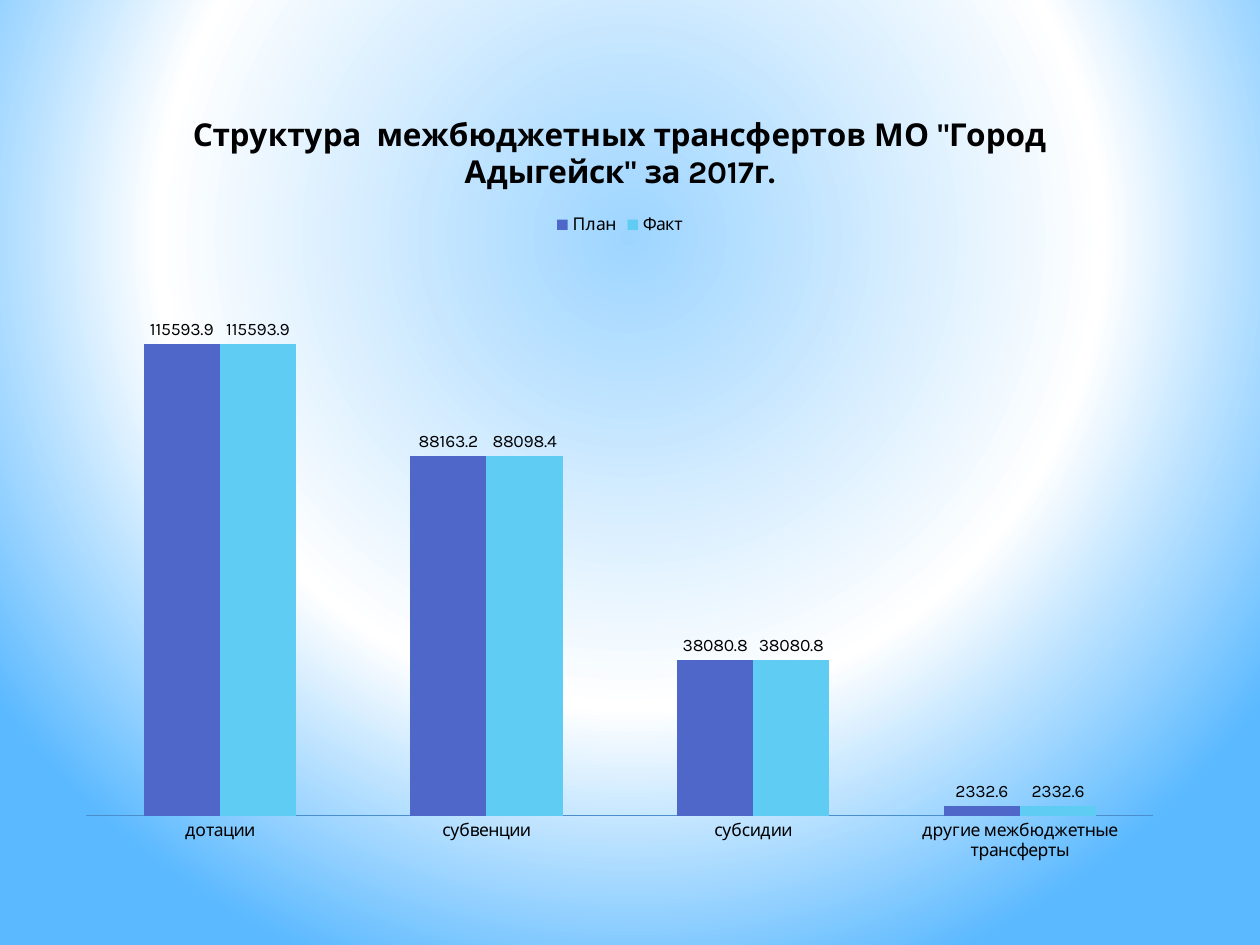
from lxml import etree
from pptx import Presentation
from pptx.chart.data import CategoryChartData
from pptx.dml.color import RGBColor
from pptx.enum.chart import XL_CHART_TYPE, XL_LABEL_POSITION, XL_LEGEND_POSITION, XL_TICK_MARK
from pptx.oxml import parse_xml
from pptx.oxml.ns import nsdecls, qn
from pptx.util import Inches, Pt

FONT = "Karla"
COLORS = {
    "text": "000000",
    "plan": "4E67C8",
    "fact": "5ECCF3",
    "axis": "4A8FCC",
    "bg_center": "9ED5FF",
    "bg_ring": "FFFFFF",
    "bg_edge": "5BB9FF",
}


def style_font(font, size, bold=False):
    font.name = FONT
    font.size = Pt(size)
    font.bold = bold
    font.color.rgb = RGBColor.from_string(COLORS["text"])


prs = Presentation()
prs.slide_width, prs.slide_height = Inches(10), Inches(7.5)
s = prs.slides.add_slide(prs.slide_layouts[6])

# Radial background
s.background.fill.gradient()
grad = s.background._cSld.find(".//" + qn("a:gradFill"))
for child in list(grad):
    grad.remove(child)
stops = etree.SubElement(grad, qn("a:gsLst"))
for percent, name in ((0, "bg_center"), (60, "bg_ring"), (100, "bg_edge")):
    stop = etree.SubElement(stops, qn("a:gs"), pos=str(percent * 1000))
    etree.SubElement(stop, qn("a:srgbClr"), val=COLORS[name])
circle = etree.SubElement(grad, qn("a:path"), path="circle")
etree.SubElement(circle, qn("a:fillToRect"), l="20000", t="10000", r="20000", b="60000")

# Chart of planned and actual transfers
data = CategoryChartData(number_format="General")
data.categories = ["дотации", "субвенции", "субсидии", "другие межбюджетные трансферты"]
data.add_series("План", (115593.9, 88163.2, 38080.8, 2332.6))
data.add_series("Факт", (115593.9, 88098.4, 38080.8, 2332.6))
chart = s.shapes.add_chart(
    XL_CHART_TYPE.COLUMN_CLUSTERED,
    Inches(0.51), Inches(0.68), Inches(8.82), Inches(6.3), data,
).chart
style_font(chart.font, 10)

chart.has_title = True
p = chart.chart_title.text_frame.paragraphs[0]
r = p.add_run()
r.text = 'Структура  межбюджетных трансфертов МО "Город Адыгейск" за 2017г.'
style_font(r.font, 18, bold=True)
chart.chart_title.include_in_layout = False

chart.has_legend = True
chart.legend.position = XL_LEGEND_POSITION.TOP
chart.legend.include_in_layout = False
style_font(chart.legend.font, 10)

cat_axis = chart.category_axis
cat_axis.major_tick_mark = XL_TICK_MARK.NONE
cat_axis.format.line.color.rgb = RGBColor.from_string(COLORS["axis"])
cat_axis.format.line.width = Pt(0.75)
style_font(cat_axis.tick_labels.font, 10)

val_axis = chart.value_axis
val_axis.visible = False
val_axis.has_major_gridlines = False
val_axis.minimum_scale, val_axis.maximum_scale = 0, 140000

plot = chart.plots[0]
plot.gap_width = 150
plot.overlap = 0
plot.vary_by_categories = False
for series, name in zip(plot.series, ("plan", "fact")):
    series.format.fill.solid()
    series.format.fill.fore_color.rgb = RGBColor.from_string(COLORS[name])
    labels = series.data_labels
    labels.show_value = True
    labels.position = XL_LABEL_POSITION.OUTSIDE_END
    style_font(labels.font, 10)

# Fixed plot area, in fractions of the chart
plot_area = chart._chartSpace.find(".//" + qn("c:plotArea"))
for old in plot_area.findall(qn("c:layout")):
    plot_area.remove(old)
plot_area.insert(0, parse_xml(
    f'<c:layout {nsdecls("c")}><c:manualLayout><c:layoutTarget val="inner"/>'
    '<c:xMode val="edge"/><c:yMode val="edge"/>'
    '<c:x val="0.02"/><c:y val="0.2"/><c:w val="0.96"/><c:h val="0.72"/>'
    '</c:manualLayout></c:layout>'))

prs.save("out.pptx")
